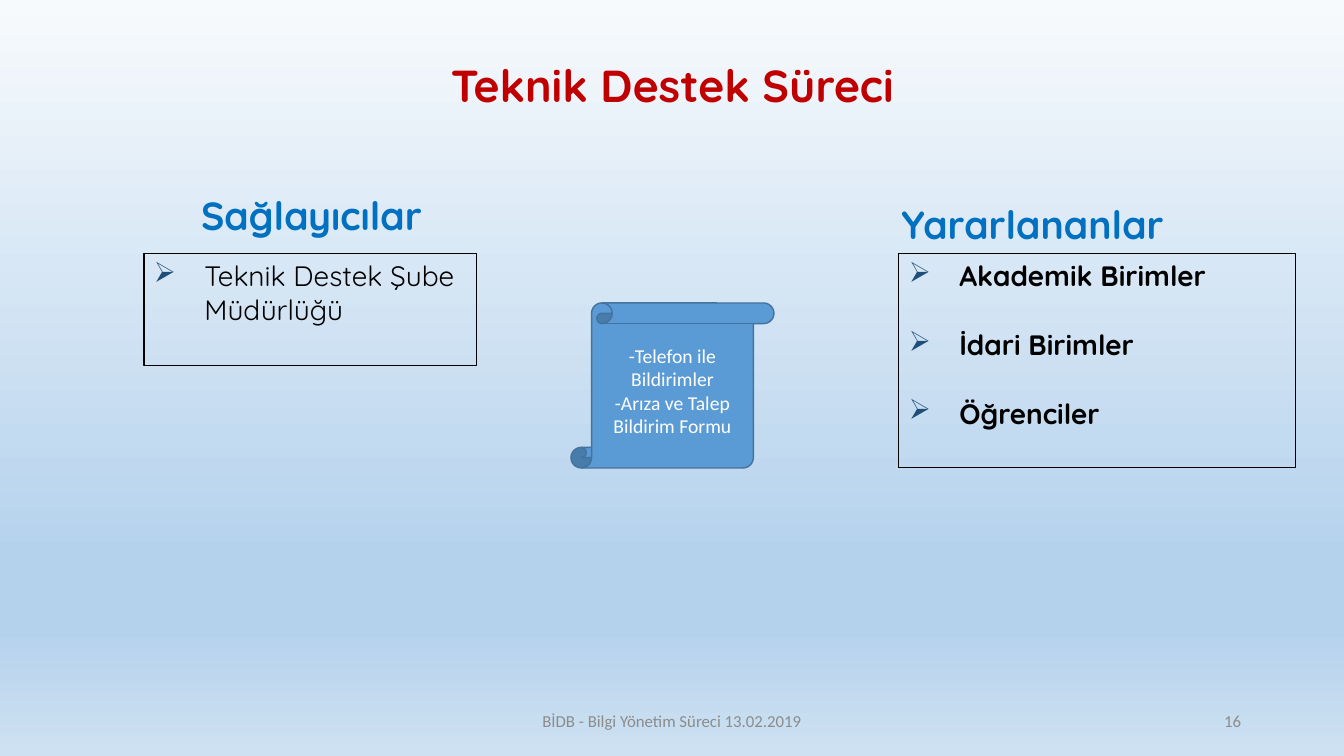
from copy import deepcopy
from dataclasses import dataclass

from lxml import etree
from pptx import Presentation
from pptx import util as u
from pptx.dml.color import RGBColor
from pptx.enum import shapes, text
from pptx.oxml.ns import qn


@dataclass(frozen=True)
class Theme:
    display: str = "Quicksand"
    body: str = "Calibri"
    title: str = "C00000"
    heading: str = "0070C0"
    ink: str = "000000"
    bullet: str = "1F4E79"
    scroll: str = "5B9BD5"
    scroll_line: str = "43739E"
    white: str = "FFFFFF"
    muted: str = "8C8C8C"
    title_size: int = 32
    heading_size: int = 28
    list_size: int = 20
    scroll_size: int = 14
    footer_size: int = 12
    list_gap: int = 25
    background: tuple = ((0, "F7FAFD"), (0.74, "B5D2EC"),
                         (0.83, "B5D2EC"), (1, "CEE1F2"))


T = Theme()
PX = 914400 / 100.8
AL = text.PP_ALIGN
MID = text.MSO_ANCHOR.MIDDLE
TOP = text.MSO_ANCHOR.TOP
SHAPE = shapes.MSO_SHAPE


def px(*lengths):
    return [u.Emu(round(n * PX)) for n in lengths]


def write(sp, lines, font, size, color, bold=False, align=AL.CENTER, anchor=TOP, **spacing):
    tf = sp.text_frame
    tf.word_wrap = True
    tf.vertical_anchor = anchor
    for i, line in enumerate(lines):
        p = tf.add_paragraph() if i else tf.paragraphs[0]
        for name, value in {"alignment": align, **spacing}.items():
            setattr(p, name, value)
        r = p.add_run()
        r.text = line
        for name, value in {"name": font, "size": u.Pt(size), "bold": bold}.items():
            setattr(r.font, name, value)
        r.font.color.rgb = RGBColor.from_string(color)
    return tf


prs = Presentation()
prs.slide_width, prs.slide_height = px(1344, 756)
s = prs.slides.add_slide(prs.slide_layouts[6])

fill = s.background.fill
fill.gradient()
fill.gradient_angle = 270
stops = s.element.find(".//" + qn("a:gsLst"))
for _ in T.background[2:]:
    stops.append(deepcopy(stops[0]))
for stop, (position, color) in zip(fill.gradient_stops, T.background):
    stop.position = position
    stop.color.rgb = RGBColor.from_string(color)

for heading, box in (
    ("Sağlayıcılar", (113, 186, 397, 58)),
    ("Yararlananlar", (834, 195, 397, 58)),
):
    sp = s.shapes.add_textbox(*px(*box))
    write(sp, [heading], T.display, T.heading_size, T.heading, bold=True)

for items, box, bold in (
    (["Teknik Destek Şube Müdürlüğü"], (144, 254, 333, 112), False),
    (["Akademik Birimler", "İdari Birimler", "Öğrenciler"], (899, 254, 397, 214), True),
):
    sp = s.shapes.add_shape(SHAPE.RECTANGLE, *px(*box))
    sp.shadow.inherit = False
    sp.fill.background()
    sp.line.color.rgb = RGBColor.from_string(T.ink)
    sp.line.width = u.Pt(0.75)
    tf = write(sp, items, T.display, T.list_size, T.ink, bold, AL.LEFT,
               space_after=u.Pt(T.list_gap))
    for p in tf.paragraphs:
        pPr = p._p.get_or_add_pPr()
        pPr.set("marL", str(u.Inches(0.5)))
        pPr.set("indent", str(-u.Inches(0.5)))
        tint = etree.SubElement(pPr, qn("a:buClr"))
        etree.SubElement(tint, qn("a:srgbClr"), val=T.bullet)
        etree.SubElement(pPr, qn("a:buChar"), char="➢")

title = s.shapes.add_textbox(*px(93, 40, 1159, 146))
tf = write(title, ["Teknik Destek Süreci"], T.display, T.title_size, T.title,
           bold=True, anchor=MID, line_spacing=0.9)
tf.margin_bottom = px(55)[0]

scroll = s.shapes.add_shape(SHAPE.VERTICAL_SCROLL, *px(571, 303, 203, 165))
scroll.shadow.inherit = False
scroll.fill.solid()
scroll.fill.fore_color.rgb = RGBColor.from_string(T.scroll)
scroll.line.color.rgb = RGBColor.from_string(T.scroll_line)
scroll.line.width = u.Pt(1)
write(scroll, ["-Telefon ile Bildirimler", "-Arıza ve Talep Bildirim Formu"],
      T.body, T.scroll_size, T.white, anchor=MID)

for label, box, align in (
    ("BİDB - Bilgi Yönetim Süreci 13.02.2019", (445, 701, 454, 40), AL.CENTER),
    ("16", (949, 701, 302, 40), AL.RIGHT),
):
    sp = s.shapes.add_textbox(*px(*box))
    write(sp, [label], T.body, T.footer_size, T.muted, align=align, anchor=MID)

prs.save("out.pptx")
